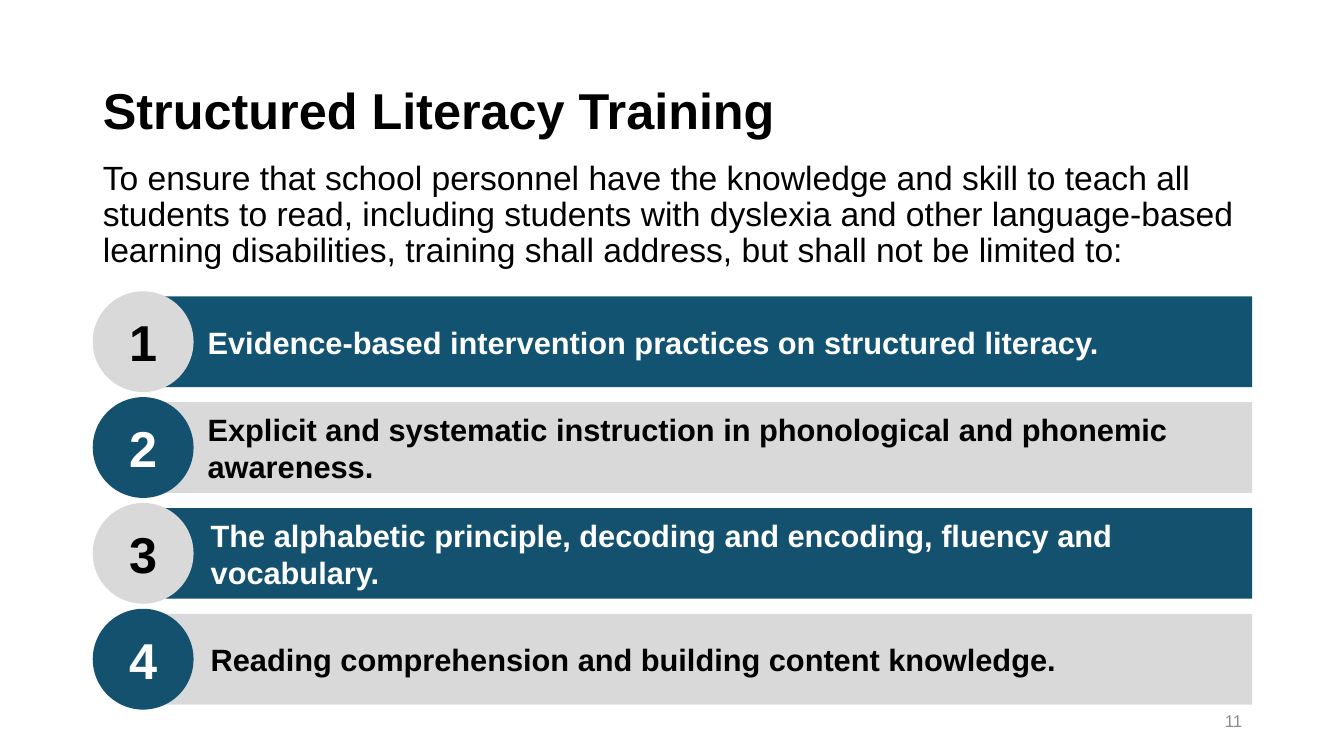
import pptx
import pptx.dml.color
import pptx.enum.shapes
import pptx.enum.text
import pptx.oxml.ns
import pptx.util
from lxml import etree

Inches = pptx.util.Inches
RGBColor = pptx.dml.color.RGBColor
Shape = pptx.enum.shapes.MSO_SHAPE
Align = pptx.enum.text.PP_ALIGN
Anchor = pptx.enum.text.MSO_ANCHOR

BLACK = RGBColor(0x00, 0x00, 0x00)
WHITE = RGBColor(0xFF, 0xFF, 0xFF)
GREY = RGBColor(0xD9, 0xD9, 0xD9)
PAGE_GREY = RGBColor(0x8C, 0x8C, 0x8C)
TEAL = RGBColor(0x12, 0x53, 0x71)
DARK_TEAL = RGBColor(0x13, 0x51, 0x6E)

LEFT, WIDTH = 0.92, 11.5
ROW_TOP, ROW_PITCH = 2.89, 1.05
BADGE_SIZE, BAR_HEIGHT = 1, 0.9

# Text, bar left edge, bar fill, bar text, badge fill, badge text
TOPICS = [
    ("Evidence-based intervention practices on structured literacy.",
     1.26, TEAL, WHITE, GREY, BLACK),
    ("Explicit and systematic instruction in phonological and phonemic awareness.",
     1.26, GREY, BLACK, DARK_TEAL, WHITE),
    ("The alphabetic principle, decoding and encoding, fluency and vocabulary.",
     1.29, DARK_TEAL, WHITE, GREY, BLACK),
    ("Reading comprehension and building content knowledge.",
     1.29, GREY, BLACK, DARK_TEAL, WHITE),
]


def write_text(shape, text, size, color=BLACK, bold=False, align=Align.LEFT,
               anchor=Anchor.MIDDLE, line_spacing=1.0, left_inset=0.1):
    frame = shape.text_frame
    frame.word_wrap = True
    frame.auto_size = pptx.enum.text.MSO_AUTO_SIZE.NONE
    frame.vertical_anchor = anchor
    frame.margin_left, frame.margin_right = Inches(left_inset), Inches(0.1)
    frame.margin_top = frame.margin_bottom = Inches(0.05)
    paragraph = frame.paragraphs[0]
    paragraph.alignment = align
    paragraph.line_spacing = line_spacing
    paragraph.space_before = pptx.util.Pt(0)
    run = paragraph.add_run()
    run.text = text
    run.font.name = "Arial"
    run.font.size = pptx.util.Pt(size)
    run.font.bold = bold
    run.font.color.rgb = color
    return paragraph


def place(shape, left, top, width, height):
    shape.left, shape.top = Inches(left), Inches(top)
    shape.width, shape.height = Inches(width), Inches(height)


def add_heading(slide, left, top, width):
    title = slide.shapes.title
    place(title, left, top, width, 1.45)
    write_text(title, "Structured Literacy Training", 36, bold=True, line_spacing=0.9)


def add_introduction(slide, left, top, width):
    introduction = slide.placeholders[1]
    place(introduction, left, top, width, 1.29)
    paragraph = write_text(
        introduction,
        "To ensure that school personnel have the knowledge and skill to teach all "
        "students to read, including students with dyslexia and other language-based "
        "learning disabilities, training shall address, but shall not be limited to:",
        24, anchor=Anchor.TOP, line_spacing=0.9)
    # Plain paragraph without bullet or hanging indent
    properties = paragraph._p.get_or_add_pPr()
    properties.set("marL", "0")
    properties.set("indent", "0")
    etree.SubElement(properties, pptx.oxml.ns.qn("a:buNone"))


def add_filled(group, preset, left, top, width, height, fill):
    shape = group.shapes.add_shape(
        preset, Inches(left), Inches(top), Inches(width), Inches(height))
    shape.shadow.inherit = False
    shape.fill.solid()
    shape.fill.fore_color.rgb = fill
    shape.line.fill.background()
    return shape


def add_topic(slide, number, topic, left, top, width):
    text, bar_left, bar_fill, bar_color, badge_fill, badge_color = topic
    row = slide.shapes.add_group_shape()
    bar = add_filled(row, Shape.RECTANGLE, bar_left,
                     top + (BADGE_SIZE - BAR_HEIGHT) / 2,
                     left + width - bar_left, BAR_HEIGHT, bar_fill)
    write_text(bar, text, 22, color=bar_color, bold=True, left_inset=0.8)
    badge = add_filled(row, Shape.OVAL, left, top, BADGE_SIZE, BADGE_SIZE, badge_fill)
    write_text(badge, str(number), 36, color=badge_color, bold=True, align=Align.CENTER)


def add_page_number(slide, left, top, width, height):
    page_number = slide.shapes.add_textbox(
        Inches(left), Inches(top), Inches(width), Inches(height))
    write_text(page_number, "11", 12, color=PAGE_GREY, align=Align.RIGHT)


def main():
    deck = pptx.Presentation()
    deck.slide_width, deck.slide_height = Inches(13.33), Inches(7.5)
    slide = deck.slides.add_slide(deck.slide_layouts[1])

    # Heading and introduction
    add_heading(slide, LEFT, 0.4, WIDTH)
    add_introduction(slide, LEFT, 1.55, WIDTH)

    # Page number
    add_page_number(slide, LEFT + WIDTH - 3, 6.95, 3, 0.4)

    # Numbered topics
    for index, topic in enumerate(TOPICS):
        add_topic(slide, index + 1, topic, LEFT, ROW_TOP + index * ROW_PITCH, WIDTH)

    deck.save("out.pptx")


if __name__ == "__main__":
    main()
